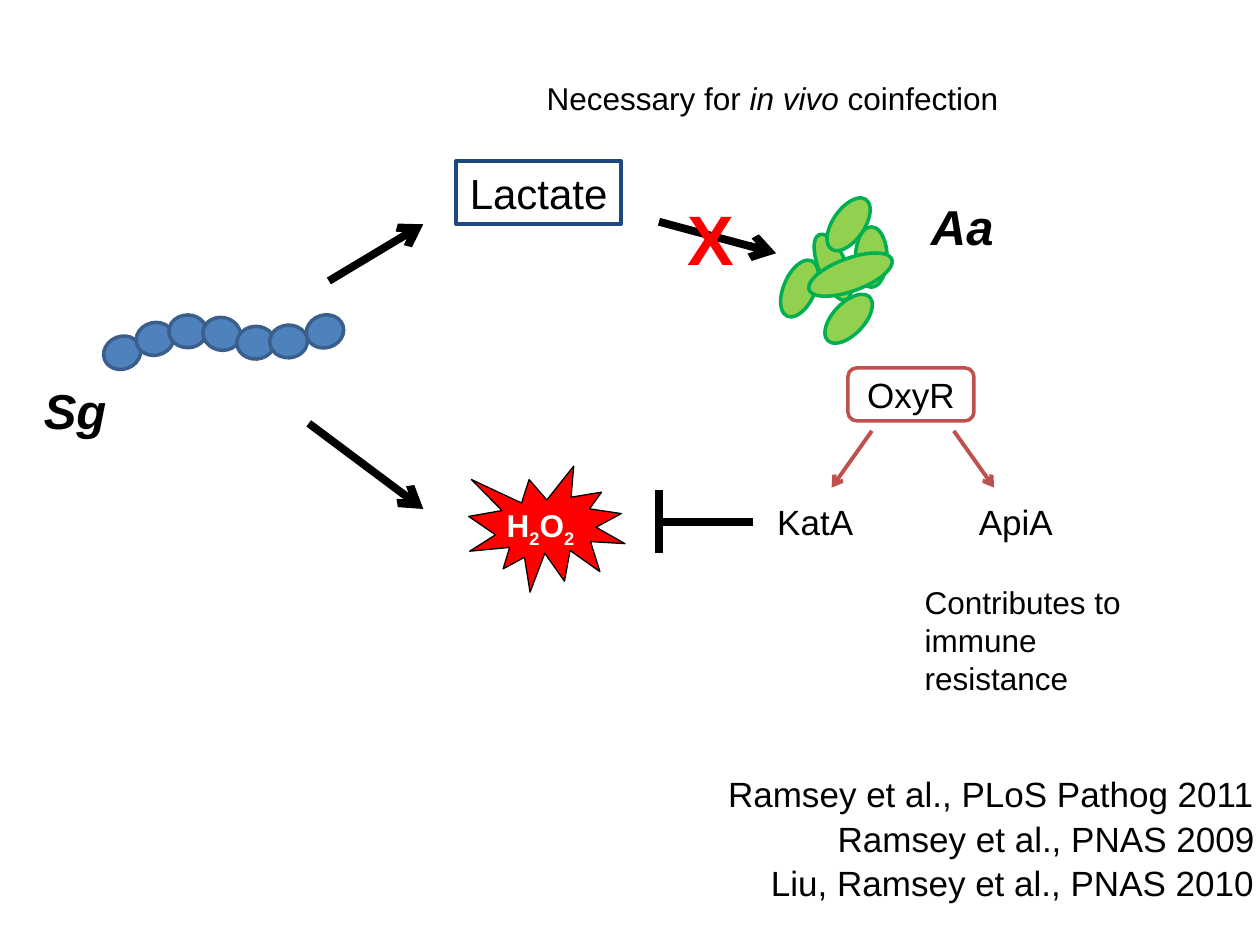
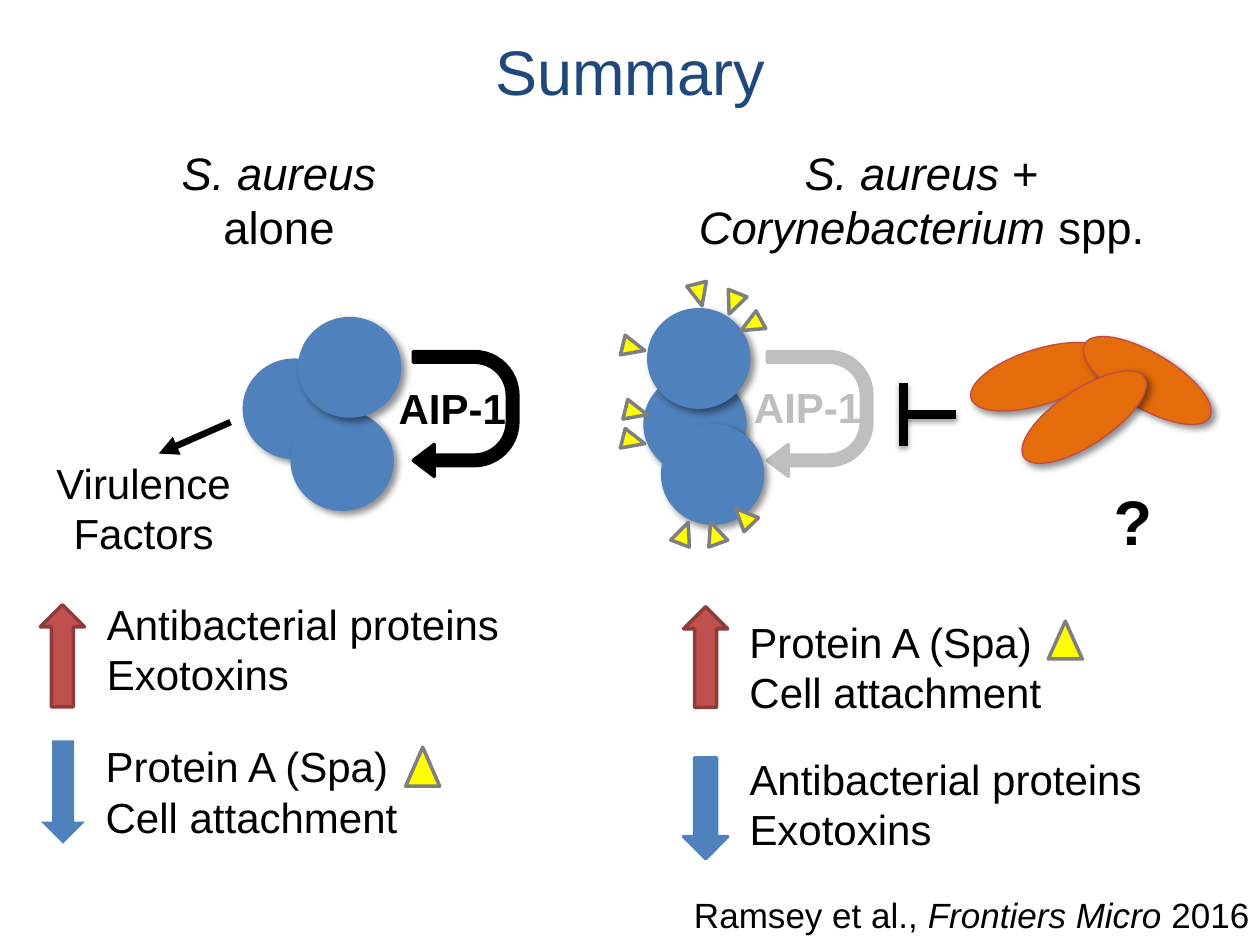
from lxml import etree
from pptx import Presentation
from pptx.dml.color import RGBColor
from pptx.enum.shapes import MSO_CONNECTOR, MSO_SHAPE
from pptx.enum.text import MSO_ANCHOR, MSO_AUTO_SIZE, PP_ALIGN
from pptx.oxml.ns import qn
from pptx.util import Pt

PX = 9144
LEFT, CENTER = PP_ALIGN.LEFT, PP_ALIGN.CENTER
TOP, MIDDLE = MSO_ANCHOR.TOP, MSO_ANCHOR.MIDDLE
GROW = MSO_AUTO_SIZE.SHAPE_TO_FIT_TEXT
STRAIGHT = MSO_CONNECTOR.STRAIGHT
ELLIPSE = MSO_SHAPE.OVAL
RECT = MSO_SHAPE.RECTANGLE
ROUND_RECT = MSO_SHAPE.ROUNDED_RECTANGLE
BURST = MSO_SHAPE.EXPLOSION1
BLOCK_ARROW = MSO_SHAPE.RIGHT_ARROW
UTURN = MSO_SHAPE.U_TURN_ARROW
TRIANGLE = MSO_SHAPE.ISOSCELES_TRIANGLE

COLORS = {
    "black": "000000", "white": "FFFFFF", "navy": "1F497D",
    "blue": "4F81BD", "dark_blue": "3A5F8C",
    "red": "FF0000", "brick": "C0504D", "dark_brick": "8E3B39",
    "lime": "92D050", "green": "00B050",
    "orange": "E46C0A", "rust": "BF4C48",
    "yellow": "FFFF00", "gray": "7F7F7F", "silver": "BFBFBF",
}
BOLD = {"bold": True}
ITALIC = {"italic": True}
BOLD_ITALIC = {**BOLD, **ITALIC}
SUB = {"baseline": -25000}
CELL_SHADOW = (4, 3, 45, 43)
BAR_SHADOW = (3.1, 1.6, 90, 38)


class Deck:
    font = "Arial"

    def __init__(self, width, height):
        self.prs = Presentation()
        self.prs.slide_width = width * PX
        self.prs.slide_height = height * PX
        self.s = None

    def slide(self):
        self.s = self.prs.slides.add_slide(self.prs.slide_layouts[6])

    def color(self, name):
        return RGBColor.from_string(COLORS[name])

    def label(self, sp, paras, size, color="black", align=LEFT, fmt=None,
              wrap=False, anchor=TOP, grow=True):
        tf = sp.text_frame
        frame = {"word_wrap": wrap, "vertical_anchor": anchor}
        if grow:
            frame["auto_size"] = GROW
        for key, value in frame.items():
            setattr(tf, key, value)
        paras = [paras] if isinstance(paras, str) else paras
        for i, runs in enumerate(paras):
            p = tf.add_paragraph() if i else tf.paragraphs[0]
            p.alignment = align
            for run in [runs] if isinstance(runs, str) else runs:
                words, extra = (run, {}) if isinstance(run, str) else run
                r = p.add_run()
                r.text = words
                style = {"name": self.font, "size": Pt(size), **(fmt or {}), **extra}
                baseline = style.pop("baseline", None)
                for key, value in style.items():
                    setattr(r.font, key, value)
                r.font.color.rgb = self.color(color)
                if baseline:
                    r._r.get_or_add_rPr().set("baseline", str(baseline))

    def text(self, x, y, w, h, paras, size, **style):
        sp = self.s.shapes.add_textbox(x * PX, y * PX, w * PX, h * PX)
        self.label(sp, paras, size, **style)

    def effect(self, sp, shadow):
        effects = etree.SubElement(sp._element.spPr, qn("a:effectLst"))
        if shadow:
            blur, dist, angle, alpha = shadow
            outer = etree.SubElement(
                effects, qn("a:outerShdw"), blurRad=str(Pt(blur)), dist=str(Pt(dist)),
                dir=str(angle * 60000), algn="ctr", rotWithShape="0")
            clr = etree.SubElement(outer, qn("a:srgbClr"), val=COLORS["black"])
            etree.SubElement(clr, qn("a:alpha"), val=str(alpha * 1000))

    def shape(self, kind, x, y, w, h, fill=None, line=None, weight=2, rot=0,
              shadow=None, adj=()):
        sp = self.s.shapes.add_shape(kind, x * PX, y * PX, w * PX, h * PX)
        sp.rotation = rot
        for i, value in enumerate(adj):
            sp.adjustments[i] = value
        if fill:
            sp.fill.solid()
            sp.fill.fore_color.rgb = self.color(fill)
        else:
            sp.fill.background()
        if line:
            sp.line.color.rgb = self.color(line)
            sp.line.width = Pt(weight)
        else:
            sp.line.fill.background()
        self.effect(sp, shadow)
        return sp

    def line(self, x1, y1, x2, y2, weight, color="black", head=None, shadow=None):
        c = self.s.shapes.add_connector(STRAIGHT, x1 * PX, y1 * PX, x2 * PX, y2 * PX)
        c.line.color.rgb = self.color(color)
        c.line.width = Pt(weight)
        if head:
            etree.SubElement(c.line._get_or_add_ln(), qn("a:tailEnd"), type=head)
        self.effect(c, shadow)

    def inhibition(self, x, y, length, weight, shadow=None):
        self.line(x + length, y, x, y, weight, shadow=shadow)
        self.line(x, y - 25, x, y + 25, weight, shadow=shadow)

    def cocci(self, places):
        for x, y in places:
            self.shape(ELLIPSE, x, y, 79, 81, "blue", "blue", 0.75, 90, CELL_SHADOW)

    def signal_loop(self, x, label_x, label_y, color):
        self.shape(UTURN, x, 287, 99, 83, color, color, rot=90,
                   adj=(0.101, 0.152, 0.2, 0.418, 1))
        self.text(label_x, label_y, 106, 50, "AIP-1", 24, color=color,
                  align=CENTER, fmt=BOLD)

    def spa(self, x, y, w=16, h=18, rot=0):
        self.shape(TRIANGLE, x, y, w, h, "yellow", "gray", rot=rot)


def interaction_slide(deck):
    deck.slide()
    for x, y, w, h, rot in [
        (622, 205, 25, 48, 23.7), (650, 184, 22, 56, 337.3), (679, 180, 25, 48, 0),
        (662, 183, 26, 70, 69.8), (661, 229, 25, 48, 43.5), (661, 154, 25, 48, 34.9),
    ]:
        deck.shape(ELLIPSE, x, y, w, h, "lime", "green", rot=rot)
    for x, y, rot in [
        (82, 267, 338.3), (108, 256, 346.8), (134, 250, 0), (161, 252, 12),
        (188, 259, 357), (214, 258, 357), (243, 250, 342.9),
    ]:
        deck.shape(ELLIPSE, x, y, 30, 26, "blue", "dark_blue", rot=rot)

    deck.shape(BURST, 372, 370, 124, 100, "red", "black", 0.75)
    deck.text(391, 397, 76, 40, [["H", ("2", SUB), "O", ("2", SUB)]], 18,
              color="white", align=CENTER, fmt=BOLD)
    lactate = deck.shape(RECT, 362, 128, 131, 50, line="navy", weight=2.25)
    deck.label(lactate, "Lactate", 24, align=CENTER)
    deck.text(25, 297, 70, 57, "Sg", 28, fmt=BOLD_ITALIC)
    deck.text(729, 151, 71, 57, "Aa", 28, fmt=BOLD_ITALIC)

    for ends in [(261, 223, 336, 178), (523, 176, 616, 201), (245, 336, 336, 404)]:
        deck.line(*ends, 4.5, head="arrow")
    deck.inhibition(523, 414, 75, 4.5)

    deck.text(424, 58, 382, 40,
              [["Necessary for ", ("in vivo", ITALIC), " coinfection"]], 18)
    deck.text(724, 458, 216, 101, "Contributes to immune resistance", 18, wrap=True)
    for x, y, w, reference in [
        (568, 608, 440, "Ramsey et al., PLoS Pathog 2011"),
        (655, 644, 354, "Ramsey et al., PNAS 2009"),
        (602, 679, 407, "Liu, Ramsey et al., PNAS 2010"),
    ]:
        deck.text(x, y, w, 44, reference, 20)

    oxyr = deck.shape(ROUND_RECT, 673, 292, 100, 42, "white", "brick")
    deck.label(oxyr, "OxyR", 20, align=CENTER, anchor=MIDDLE, wrap=True, grow=False)
    for x, gene, start, end in [(607, "KatA", 692, 660), (767, "ApiA", 757, 789)]:
        deck.text(x, 392, 81, 44, gene, 20)
        deck.line(start, 342, end, 387, 2.25, "brick", "arrow")
    deck.text(536, 150, 58, 77, "X", 40, color="red", fmt=BOLD)


def summary_slide(deck):
    deck.slide()
    deck.text(0, 21, 1000, 71, "Summary", 36, color="navy", align=CENTER, wrap=True)
    deck.text(133, 110, 177, 98, [[("S. aureus", ITALIC)], "alone"], 26, align=CENTER)
    deck.text(543, 110, 377, 98, [
        [("S. aureus ", ITALIC), "+"],
        [("Corynebacterium ", ITALIC), "spp."],
    ], 26, align=CENTER)

    toxins = ["Antibacterial proteins", "Exotoxins"]
    adhesion = ["Protein A (Spa)", "Cell attachment"]
    for x, y, w, h, lines in [
        (75, 470, 335, 118, toxins), (74, 583, 254, 91, adhesion),
        (585, 484, 254, 91, adhesion), (585, 593, 335, 140, toxins),
    ]:
        deck.text(x, y, w, h, lines, 24)
    for x, y, w, fill, line, rot in [
        (9, 503, 81, "brick", "dark_brick", 270), (9, 611, 82, "blue", None, 90),
        (520, 504, 80, "brick", "dark_brick", 270), (520, 624, 80, "blue", "blue", 90),
    ]:
        deck.shape(BLOCK_ARROW, x, y, w, 35, fill, line, rot=rot)
    deck.spa(322, 593, 27, 31)
    deck.spa(832, 493, 27, 30)

    deck.cocci([(194, 284), (232, 325), (238, 251)])
    deck.line(183, 335, 126, 360, 3.75, head="triangle")
    deck.text(34, 358, 160, 131, ["Virulence", "Factors"], 24, align=CENTER)
    deck.signal_loop(320, 306, 299, "black")

    deck.text(874, 378, 51, 71, "?", 36, fmt=BOLD)
    for x, y, rot in [(768, 277, 342.5), (853, 280, 30.7), (803, 309, 146.4)]:
        deck.shape(ELLIPSE, x, y, 115, 44, "orange", "rust", 0.75, rot, CELL_SHADOW)
    deck.signal_loop(601, 588, 298, "silver")
    deck.cocci([(512, 296), (515, 244), (526, 336)])
    for x, y, rot in [
        (574, 232, 202), (547, 225, 166), (588, 249, 241),
        (582, 401, 316), (535, 414, 21), (559, 414, 340),
        (495, 267, 104), (497, 318, 104), (495, 341, 104),
    ]:
        deck.spa(x, y, rot=rot)
    deck.inhibition(717, 329, 42, 5, BAR_SHADOW)
    deck.text(541, 704, 464, 44,
              [["Ramsey et al., ", ("Frontiers Micro", ITALIC), " 2016"]], 20)


def main():
    deck = Deck(1000, 750)
    interaction_slide(deck)
    summary_slide(deck)
    deck.prs.save("out.pptx")


if __name__ == "__main__":
    main()
